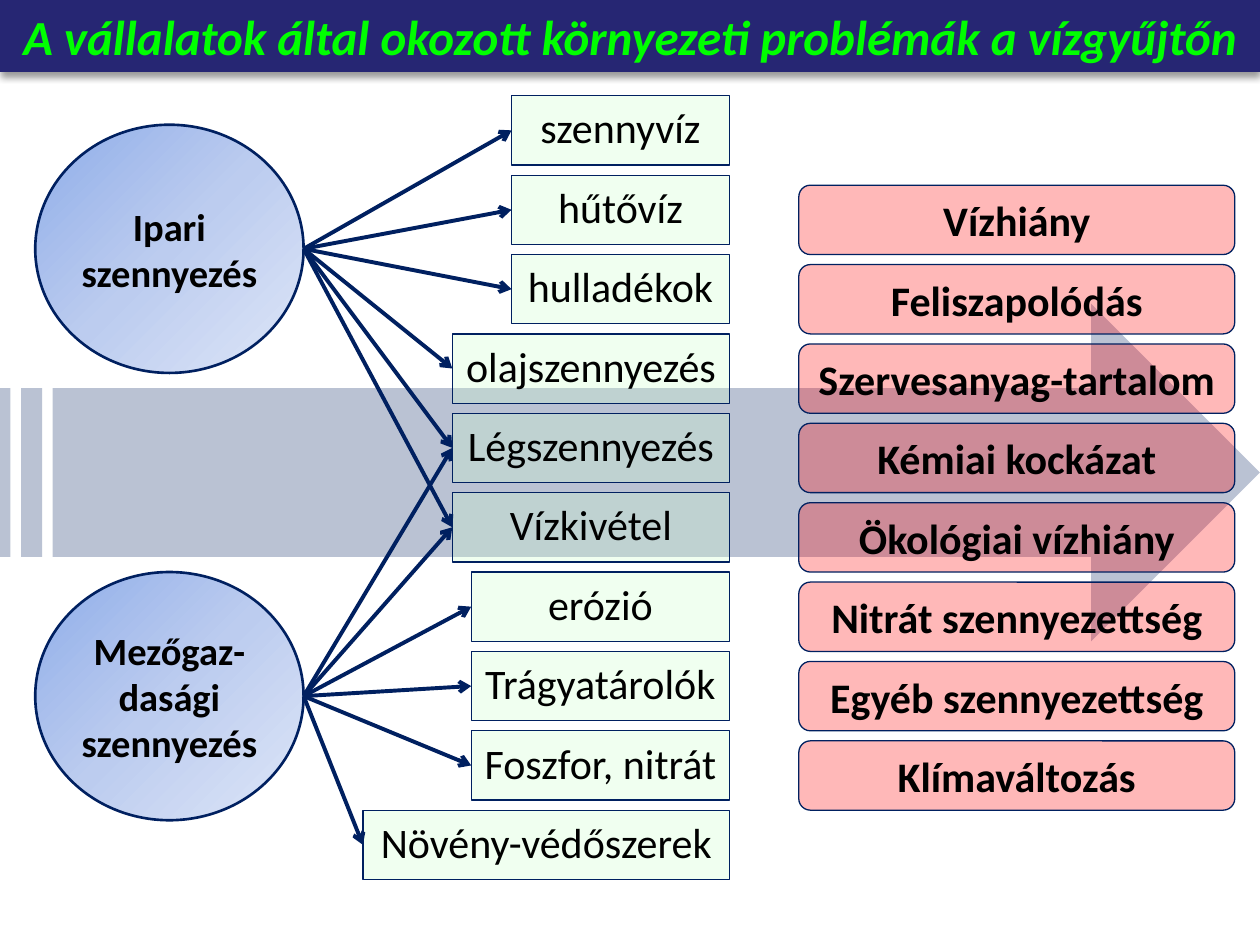
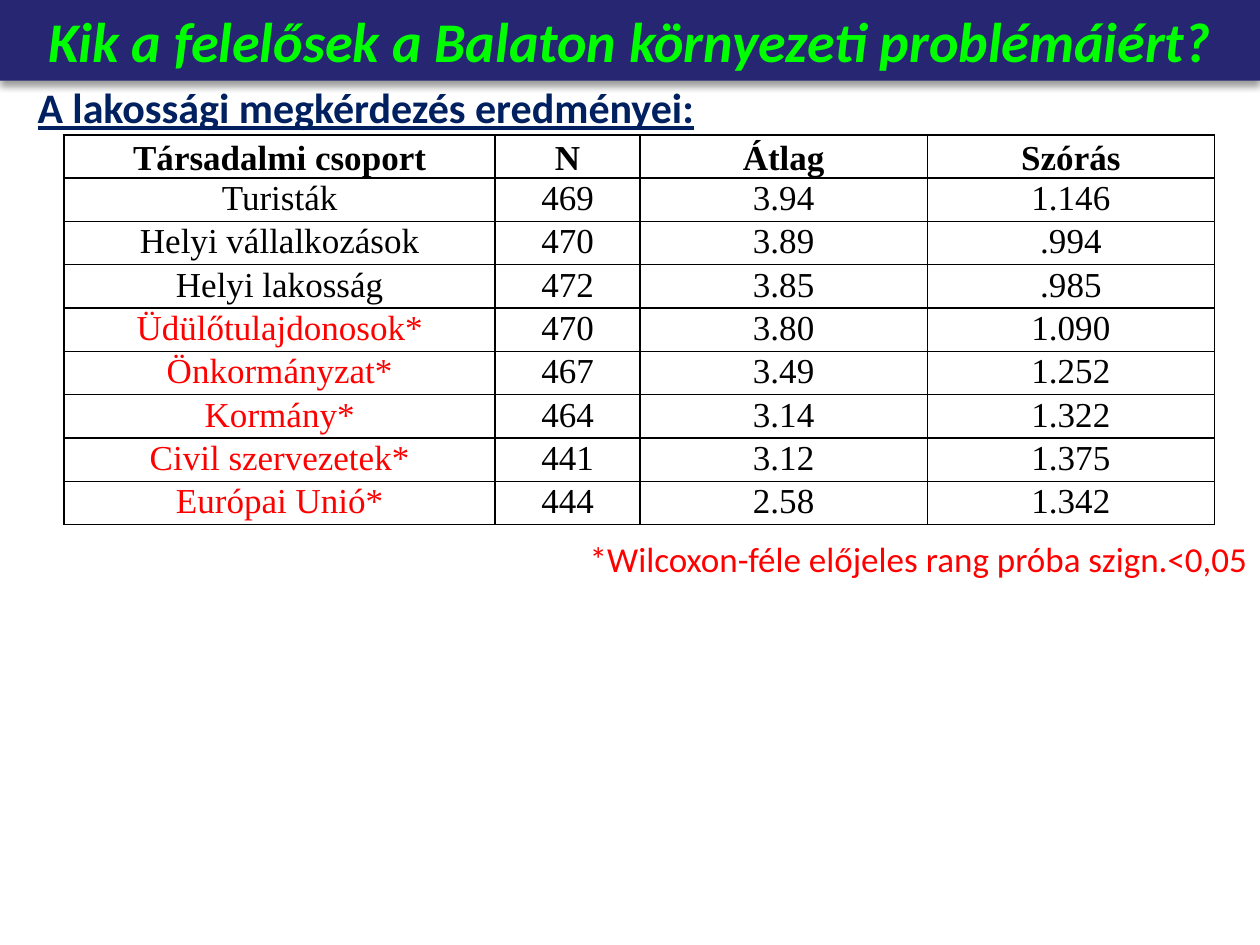
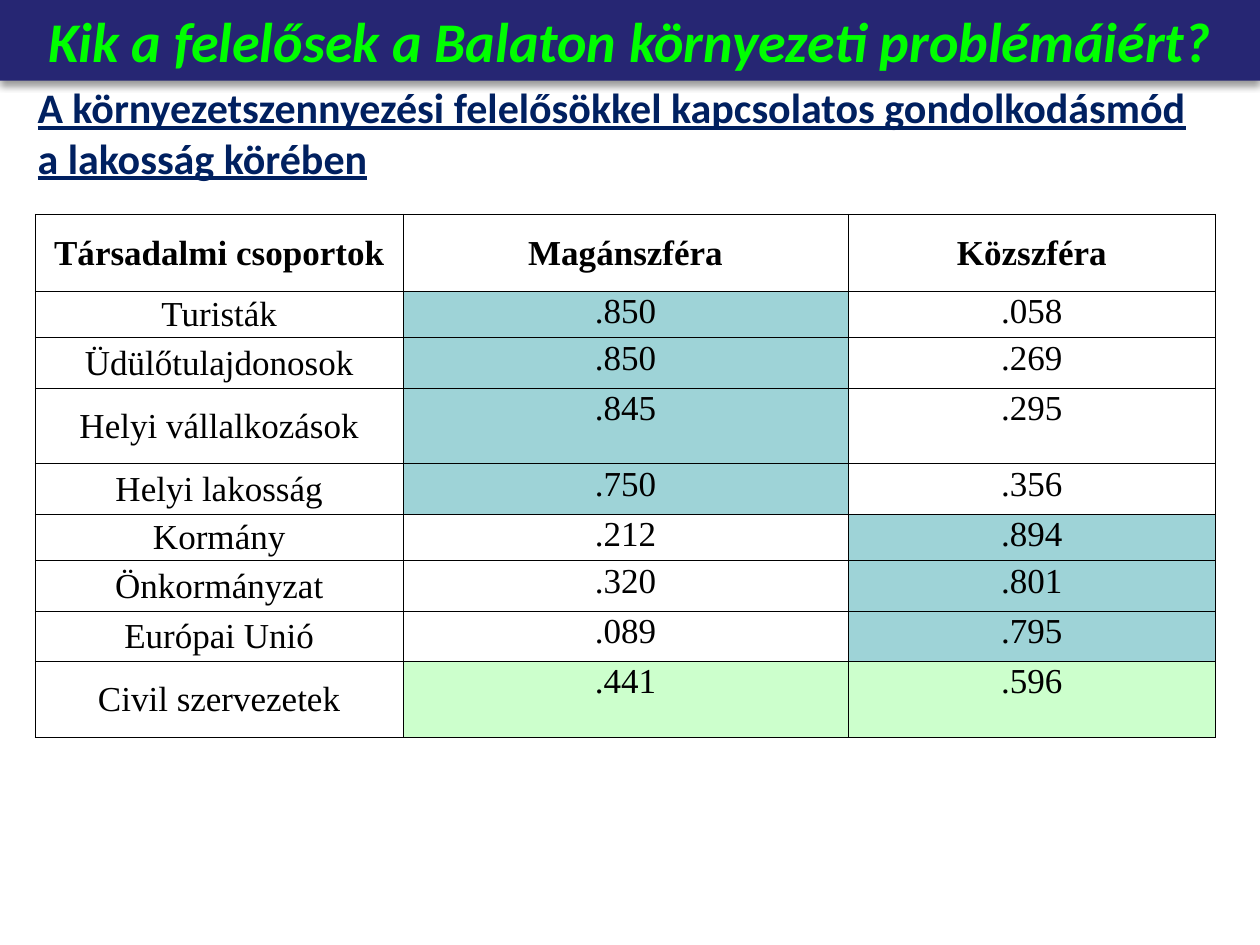
import copy
import dataclasses

import pptx
import pptx.dml.color
import pptx.enum.dml
import pptx.enum.shapes
import pptx.enum.text
import pptx.oxml
import pptx.oxml.ns
import pptx.util

Inches = pptx.util.Inches
Pt = pptx.util.Pt
qn = pptx.oxml.ns.qn
Preset = pptx.enum.shapes.MSO_SHAPE
Align = pptx.enum.text.PP_ALIGN
Anchor = pptx.enum.text.MSO_ANCHOR
AutoSize = pptx.enum.text.MSO_AUTO_SIZE


@dataclasses.dataclass(frozen=True)
class Theme:
    body_font: str = "Calibri"
    table_font: str = "Times New Roman"
    band: str = "262673"
    title: str = "00FF00"
    navy: str = "002060"
    ink: str = "000000"
    alert: str = "FF0000"
    mint: str = "CCFFCC"
    teal: str = "9ED3D7"
    source_gradient: tuple = ((0, "8FADE9"), (0.5, "BCCCEF"), (1, "DEE6F7"))
    small: int = 20
    source: int = 22
    label: int = 24
    long_title: int = 28
    short_title: int = 32


@dataclasses.dataclass(frozen=True)
class Box:
    left: float
    top: float
    width: float
    height: float

    @property
    def inches(self):
        return [Inches(n) for n in (self.left, self.top, self.width, self.height)]


THEME = Theme()
STEP = 0.63
LABEL_HEIGHT = 0.55

POLLUTANTS = [
    ("szennyvíz", 1.73), ("hűtővíz", 1.73), ("hulladékok", 1.73),
    ("olajszennyezés", 2.2), ("Légszennyezés", 2.2), ("Vízkivétel", 2.2),
    ("erózió", 2.05), ("Trágyatárolók", 2.05), ("Foszfor, nitrát", 2.05),
    ("Növény-védőszerek", 2.91),
]
SOURCES = [
    ("Ipari szennyezés", 0.99, slice(0, 6)),
    ("Mezőgaz-dasági szennyezés", 4.54, slice(4, 10)),
]
RISKS = [
    "Vízhiány", "Feliszapolódás", "Szervesanyag-tartalom", "Kémiai kockázat",
    "Ökológiai vízhiány", "Nitrát szennyezettség", "Egyéb szennyezettség",
    "Klímaváltozás",
]
RESPONSIBILITY_TITLE = "Kik a felelősek a Balaton környezeti problémáiért?"
SURVEY = [
    ("Társadalmi csoport", "N", "Átlag", "Szórás"),
    ("Turisták", "469", "3.94", "1.146"),
    ("Helyi vállalkozások", "470", "3.89", ".994"),
    ("Helyi lakosság", "472", "3.85", ".985"),
    ("Üdülőtulajdonosok*", "470", "3.80", "1.090"),
    ("Önkormányzat*", "467", "3.49", "1.252"),
    ("Kormány*", "464", "3.14", "1.322"),
    ("Civil szervezetek*", "441", "3.12", "1.375"),
    ("Európai Unió*", "444", "2.58", "1.342"),
]
SPHERES = [
    ("Társadalmi csoportok", "Magánszféra", "Közszféra"),
    ("Turisták", ".850", ".058"),
    ("Üdülőtulajdonosok", ".850", ".269"),
    ("Helyi vállalkozások", ".845", ".295"),
    ("Helyi lakosság", ".750", ".356"),
    ("Kormány", ".212", ".894"),
    ("Önkormányzat", ".320", ".801"),
    ("Európai Unió", ".089", ".795"),
    ("Civil szervezetek", ".441", ".596"),
]


def rgb(value):
    return pptx.dml.color.RGBColor.from_string(value)


def write(frame, text, size, color=THEME.ink, font=THEME.body_font,
          align=Align.CENTER, bold=False, italic=False, underline=False):
    paragraph = frame.paragraphs[0]
    paragraph.alignment = align
    run = paragraph.add_run()
    run.text = text
    run.font.name = font
    run.font.size = Pt(size)
    run.font.bold = bold
    run.font.italic = italic
    run.font.underline = underline
    run.font.color.rgb = rgb(color)


def fill_solid(shape, color, opacity):
    shape.fill.solid()
    shape.fill.fore_color.rgb = rgb(color)
    tint = shape._element.spPr.find(qn("a:solidFill"))[0]
    tint.append(pptx.oxml.parse_xml(
        f'<a:alpha {pptx.oxml.ns.nsdecls("a")} val="{opacity * 1000}"/>'))


def outline(shape, width):
    shape.line.color.rgb = rgb(THEME.navy)
    shape.line.width = Pt(width)


def add_titled_slide(deck, text, size, height):
    slide = deck.slides.add_slide(deck.slide_layouts[5])
    band = slide.shapes.title
    band.left, band.top, band.width, band.height = Box(0, 0, 10, height).inches
    band.fill.solid()
    band.fill.fore_color.rgb = rgb(THEME.band)
    band._element.spPr.append(pptx.oxml.parse_xml(
        f'<a:effectLst {pptx.oxml.ns.nsdecls("a")}>'
        f'<a:outerShdw blurRad="{Pt(4)}" dist="{Pt(3)}" dir="5400000" rotWithShape="0">'
        f'<a:srgbClr val="{THEME.ink}"><a:alpha val="40000"/></a:srgbClr>'
        '</a:outerShdw></a:effectLst>'))
    frame = band.text_frame
    frame.auto_size = AutoSize.NONE
    frame.vertical_anchor = Anchor.TOP
    write(frame, text, size, THEME.title, bold=True, italic=True)
    return slide


def add_label(slide, box, text, preset, color, bold=False):
    label = slide.shapes.add_shape(preset, *box.inches)
    label.shadow.inherit = False
    fill_solid(label, color, 28)
    outline(label, 0.75)
    label.text_frame.word_wrap = False
    label.text_frame.vertical_anchor = Anchor.TOP
    write(label.text_frame, text, THEME.label, bold=bold)
    return label


def add_source(slide, box, text):
    source = slide.shapes.add_shape(Preset.OVAL, *box.inches)
    source.shadow.inherit = False
    source.fill.gradient()
    source.fill.gradient_angle = 315
    stops = source._element.spPr.find(".//" + qn("a:gsLst"))
    stops.insert(1, copy.deepcopy(stops[0]))
    for stop, (position, color) in zip(source.fill.gradient_stops, THEME.source_gradient):
        stop.position = position
        stop.color.rgb = rgb(color)
    outline(source, 1.5)
    frame = source.text_frame
    frame.word_wrap = True
    frame.margin_left = frame.margin_right = 0
    frame.vertical_anchor = Anchor.MIDDLE
    write(frame, text, THEME.source, bold=True)
    return source


def add_arrow(slide, source, target):
    arrow = slide.shapes.add_connector(
        pptx.enum.shapes.MSO_CONNECTOR.STRAIGHT,
        source.left + source.width, source.top + source.height // 2,
        target.left, target.top + target.height // 2)
    outline(arrow, 2.25)
    namespace = pptx.oxml.ns.nsdecls("a")
    arrow.line._get_or_add_ln().append(
        pptx.oxml.parse_xml(f'<a:tailEnd {namespace} type="arrow"/>'))
    arrow._element.spPr.append(pptx.oxml.parse_xml(f'<a:effectLst {namespace}/>'))


def add_flow_arrow(slide, box):
    flow = slide.shapes.add_shape(Preset.STRIPED_RIGHT_ARROW, *box.inches)
    flow.shadow.inherit = False
    fill_solid(flow, THEME.navy, 27)
    flow.line.fill.background()


def add_pollutants(slide, box):
    return [
        add_label(slide, Box(box.left + box.width - width, box.top + row * STEP,
                             width, LABEL_HEIGHT),
                  text, Preset.RECTANGLE, THEME.mint)
        for row, (text, width) in enumerate(POLLUTANTS)
    ]


def add_risks(slide, box):
    for row, text in enumerate(RISKS):
        add_label(slide, Box(box.left, box.top + row * STEP, box.width, LABEL_HEIGHT),
                  text, Preset.ROUNDED_RECTANGLE, THEME.alert, bold=True)


def add_text(slide, box, text, size, color, **style):
    frame = slide.shapes.add_textbox(*box.inches).text_frame
    frame.word_wrap = True
    frame.auto_size = AutoSize.SHAPE_TO_FIT_TEXT
    write(frame, text, size, color, **style)


def add_subtitle(slide, height, text):
    add_text(slide, Box(0.2, 0.6, 9.53, height), text, THEME.label, THEME.navy,
             align=Align.LEFT, bold=True, underline=True)


def format_cell(cell, text, border, anchor, color, shade, bold):
    cell.margin_left = cell.margin_right = cell.margin_top = Inches(0.01)
    cell.margin_bottom = 0
    cell.vertical_anchor = anchor
    properties = cell._tc.get_or_add_tcPr()
    for side in "LRTB":
        properties.append(pptx.oxml.parse_xml(
            f'<a:ln{side} {pptx.oxml.ns.nsdecls("a")} w="{Pt(border)}">'
            f'<a:solidFill><a:srgbClr val="{THEME.ink}"/></a:solidFill></a:ln{side}>'))
    if shade:
        cell.fill.solid()
        cell.fill.fore_color.rgb = rgb(shade)
    else:
        cell.fill.background()
    write(cell.text_frame, text, THEME.small, color, THEME.table_font, bold=bold)


def add_grid(slide, box, records, widths, heights, border, anchor_for, shade_for):
    table = slide.shapes.add_table(len(records), len(widths), *box.inches).table
    table.first_row = table.horz_banding = False
    for column, width in zip(table.columns, widths):
        column.width = Inches(width)
    for row, height in zip(table.rows, heights):
        row.height = Inches(height)
    for r, record in enumerate(records):
        for c, text in enumerate(record):
            color = THEME.alert if text.endswith("*") else THEME.ink
            format_cell(table.cell(r, c), text, border, anchor_for(r, c), color,
                        shade_for(r, c), bold=r == 0)


def sphere_shade(row, column):
    if row == 0 or column == 0:
        return None
    if row == len(SPHERES) - 1:
        return THEME.mint
    return THEME.teal if float(SPHERES[row][column]) > 0.5 else None


def build_problems(deck):
    slide = add_titled_slide(
        deck, "A vállalatok által okozott környezeti problémák a vízgyűjtőn",
        THEME.long_title, 0.57)
    add_flow_arrow(slide, Box(0, 2.41, 10, 2.68))
    pollutants = add_pollutants(slide, Box(2.88, 0.76, 2.91, 6.22))
    add_risks(slide, Box(6.34, 1.47, 3.46, 4.96))
    for text, top, targets in SOURCES:
        source = add_source(slide, Box(0.28, top, 2.13, 1.97), text)
        for pollutant in pollutants[targets]:
            add_arrow(slide, source, pollutant)


def build_survey(deck):
    slide = add_titled_slide(deck, RESPONSIBILITY_TITLE, THEME.short_title, 0.64)
    add_subtitle(slide, 0.5, "A lakossági megkérdezés eredményei:")
    add_text(slide, Box(0.47, 4.22, 9.53, 0.44),
             "*Wilcoxon-féle előjeles rang próba szign.<0,05",
             THEME.small, THEME.alert, align=Align.RIGHT)
    add_grid(slide, Box(0.51, 1.07, 9.13, 3.09), SURVEY, [3.42, 1.15, 2.28, 2.28],
             [0.34] * len(SURVEY), 1,
             lambda row, column: Anchor.TOP if row else Anchor.BOTTOM,
             lambda row, column: None)


def build_spheres(deck):
    slide = add_titled_slide(deck, RESPONSIBILITY_TITLE, THEME.short_title, 0.64)
    add_subtitle(slide, 0.91, "A környezetszennyezési felelősökkel kapcsolatos "
                              "gondolkodásmód a lakosság körében")
    add_grid(slide, Box(0.28, 1.7, 9.37, 4.15), SPHERES, [2.92, 3.53, 2.92],
             [0.61, 0.37, 0.4, 0.6, 0.4, 0.37, 0.4, 0.4, 0.6], 0.5,
             lambda row, column: Anchor.TOP if row and column else Anchor.MIDDLE,
             sphere_shade)


def main():
    deck = pptx.Presentation()
    deck.slide_width, deck.slide_height = Inches(10), Inches(7.5)
    build_problems(deck)
    build_survey(deck)
    build_spheres(deck)
    deck.save("out.pptx")


if __name__ == "__main__":
    main()
